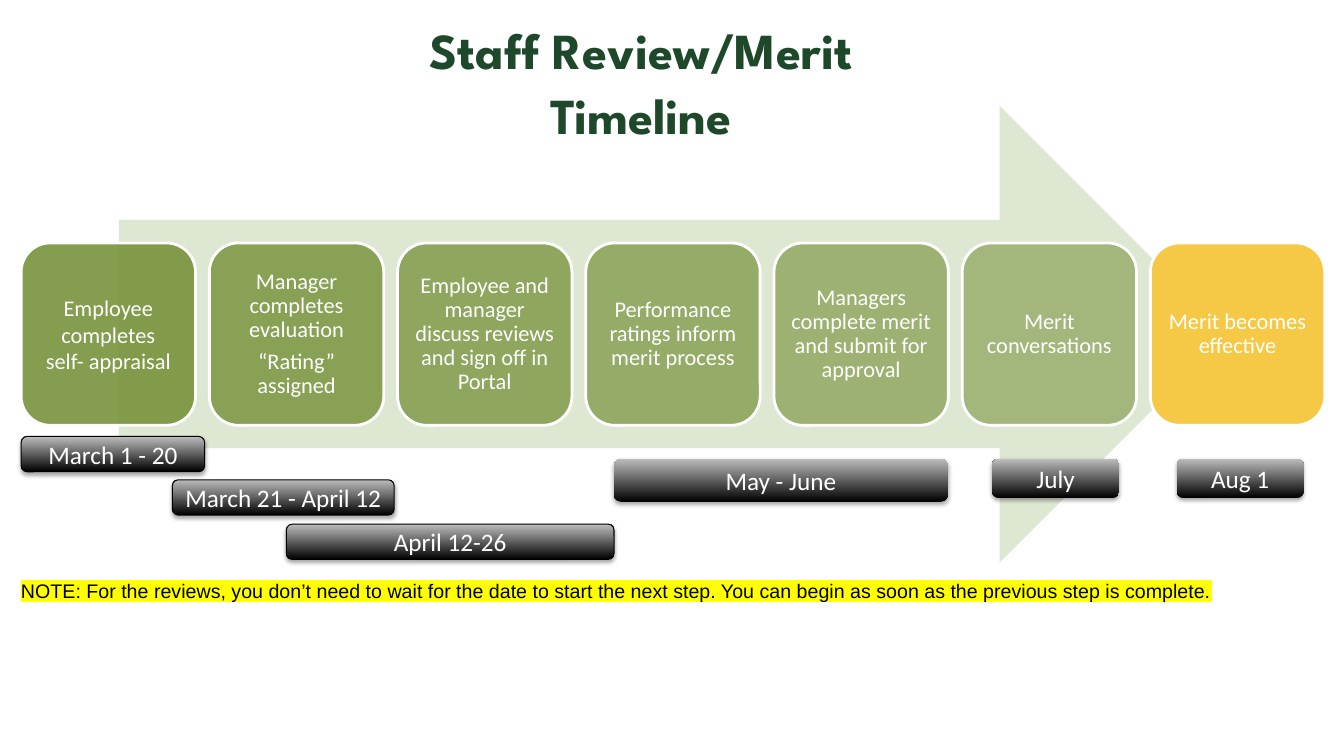
from dataclasses import dataclass

from lxml import etree
from pptx import Presentation
from pptx.dml.color import RGBColor
from pptx.enum.shapes import MSO_SHAPE as SHAPE
from pptx.enum.text import MSO_ANCHOR as ANCHOR, PP_ALIGN as ALIGN
from pptx.oxml.ns import qn
from pptx.util import Inches, Pt


@dataclass(frozen=True)
class Theme:
    title_font: str = "League Spartan"
    body_font: str = "Calibri"
    note_font: str = "Arial"
    title_size: int = 36
    card_size: int = 16
    date_size: int = 18
    note_size: int = 14
    title: str = "1E482A"
    arrow: str = "DEE7D1"
    step: str = "77933C"
    final: str = "F5C945"
    pill_top: str = "BDBDBD"
    black: str = "000000"
    white: str = "FFFFFF"
    marker: str = "FFFF00"


T = Theme()

STEPS = [
    ["Employee completes", "self- appraisal"],
    ["Manager completes evaluation", "“Rating” assigned"],
    ["Employee and manager discuss reviews and sign off in Portal"],
    ["Performance ratings inform merit process"],
    ["Managers complete merit and submit for approval"],
    ["Merit conversations"],
    ["Merit becomes effective"],
]
# Text, left, top, width, height, outlined
DATES = [
    ("March 1 - 20", 0.21, 4.33, 1.82, 0.35, True),
    ("March 21 - April 12", 1.71, 4.76, 2.2, 0.35, True),
    ("April 12-26", 2.84, 5.2, 3.25, 0.35, True),
    ("May - June", 6.09, 4.55, 3.31, 0.43, False),
    ("July", 9.84, 4.55, 1.26, 0.39, False),
    ("Aug 1", 11.67, 4.55, 1.26, 0.39, False),
]
NOTE = ("NOTE: For the reviews, you don’t need to wait for the date to start the next step. "
        "You can begin as soon as the previous step is complete.")


def rgb(color):
    return RGBColor.from_string(color)


def write(tf, lines, font, size, color, align=ALIGN.CENTER, anchor=ANCHOR.MIDDLE,
          bold=False, spacing=None, after=None, wrap=True, marker=None):
    """Fill a text frame with one paragraph per line."""
    tf.word_wrap = wrap
    tf.vertical_anchor = anchor
    for i, line in enumerate(lines):
        p = tf.add_paragraph() if i else tf.paragraphs[0]
        p.alignment = align
        p.line_spacing = spacing
        p.space_after = after
        r = p.add_run()
        r.text = line
        r.font.name, r.font.size, r.font.bold = font, Pt(size), bold
        r.font.color.rgb = rgb(color)
        if marker:
            hl = etree.Element(qn("a:highlight"))
            etree.SubElement(hl, qn("a:srgbClr"), val=marker)
            r.font._element.find(qn("a:solidFill")).addnext(hl)


def add_box(s, x, y, w, h):
    return s.shapes.add_textbox(Inches(x), Inches(y), Inches(w), Inches(h)).text_frame


def add_shape(s, kind, x, y, w, h, fill=None, alpha=100, line=None, line_width=0):
    sp = s.shapes.add_shape(kind, Inches(x), Inches(y), Inches(w), Inches(h))
    sp.shadow.inherit = False
    if fill:
        sp.fill.solid()
        sp.fill.fore_color.rgb = rgb(fill)
        if alpha < 100:
            clr = sp._element.spPr.find(qn("a:solidFill"))[0]
            etree.SubElement(clr, qn("a:alpha"), val=str(round(alpha * 1000)))
    if line:
        sp.line.color.rgb = rgb(line)
        sp.line.width = Pt(line_width)
    else:
        sp.line.fill.background()
    return sp


def add_card(s, i, lines):
    """Step card: fades along the row, with the last one highlighted."""
    last = len(STEPS) - 1
    fill, alpha = (T.final, 100) if i == last else (T.step, 90 - i * 40 / last)
    sp = add_shape(s, SHAPE.ROUNDED_RECTANGLE, 0.21 + i * 11.2 / last, 2.41, 1.73, 1.81,
                   fill, alpha, T.white, 2)
    tf = sp.text_frame
    tf.margin_left = tf.margin_right = tf.margin_top = tf.margin_bottom = Inches(0.07)
    spacing, after = (0.9, Pt(5.6)) if i else (None, None)
    write(tf, lines, T.body_font, T.card_size, T.white, spacing=spacing, after=after)


def add_date(s, text, x, y, w, h, outlined):
    """Date pill with a vertical gradient and a soft shadow."""
    sp = add_shape(s, SHAPE.ROUNDED_RECTANGLE, x, y, w, h,
                   line=T.black if outlined else None, line_width=0.75)
    sp.fill.gradient()
    sp.fill.gradient_angle = 90
    for stop, color in zip(sp.fill.gradient_stops, (T.black, T.pill_top)):
        stop.color.rgb = rgb(color)
    effects = sp._element.spPr.find(qn("a:effectLst"))
    shadow = etree.SubElement(effects, qn("a:outerShdw"), blurRad=str(Pt(3.1)),
                              dist=str(Pt(1.8)), dir="5400000", rotWithShape="0")
    clr = etree.SubElement(shadow, qn("a:srgbClr"), val=T.black)
    etree.SubElement(clr, qn("a:alpha"), val="35000")
    write(sp.text_frame, [text], T.body_font, T.date_size, T.white)


def main():
    prs = Presentation()
    prs.slide_width, prs.slide_height = Inches(13.33), Inches(7.5)
    s = prs.slides.add_slide(prs.slide_layouts[6])

    # Process arrow and steps
    add_shape(s, SHAPE.RIGHT_ARROW, 1.18, 1.05, 11, 4.53, T.arrow)
    for i, lines in enumerate(STEPS):
        add_card(s, i, lines)

    # Title
    write(add_box(s, 4.1, 0.1, 4.52, 1.4), ["Staff Review/Merit", "Timeline"],
          T.title_font, T.title_size, T.title, anchor=ANCHOR.TOP,
          bold=True, spacing=1.07, wrap=False)

    # Dates
    for date in DATES:
        add_date(s, *date)

    # Note
    write(add_box(s, 0.11, 5.69, 12.62, 0.34), [NOTE], T.note_font, T.note_size, T.black,
          align=ALIGN.LEFT, anchor=ANCHOR.TOP, marker=T.marker)

    prs.save("out.pptx")


if __name__ == "__main__":
    main()
